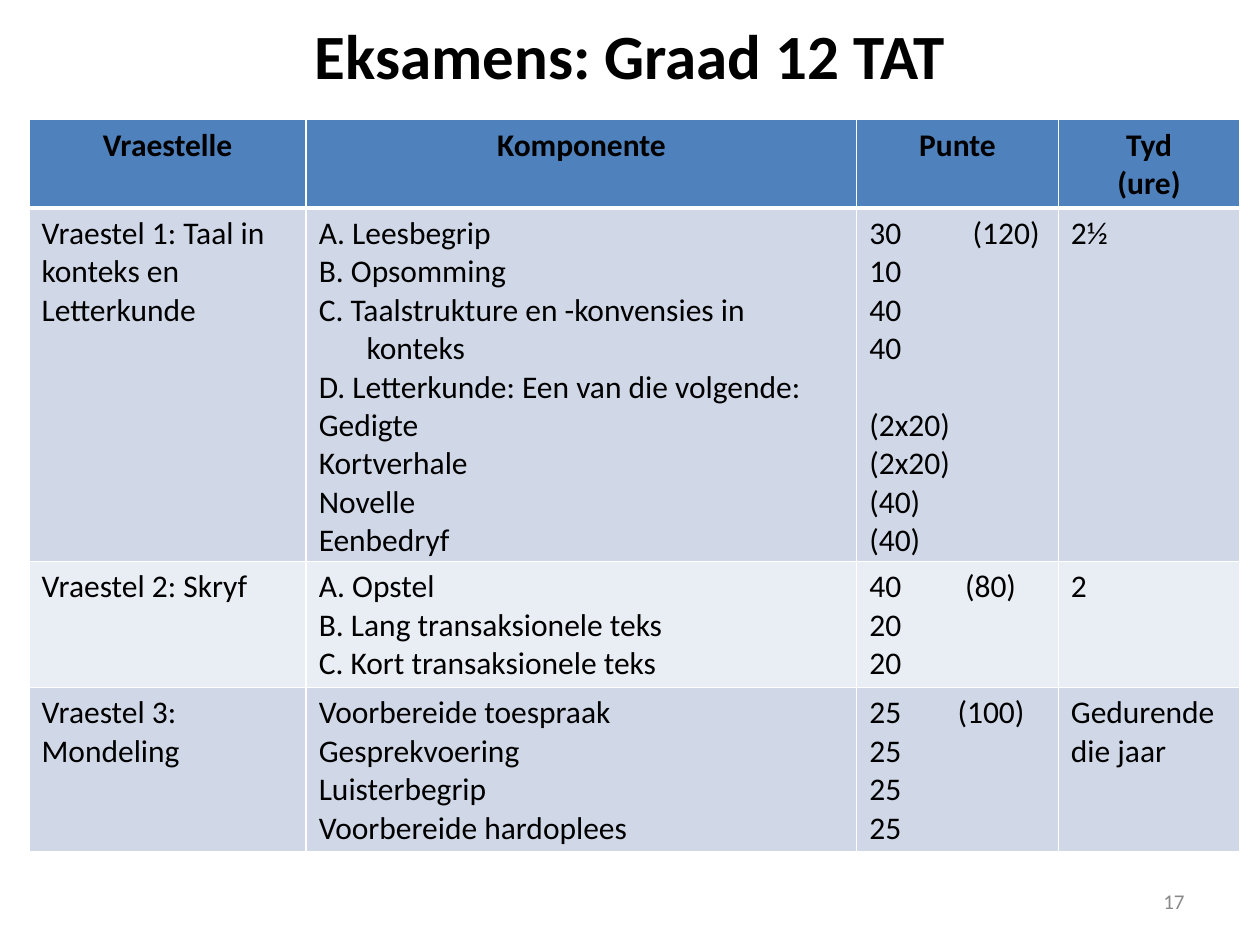
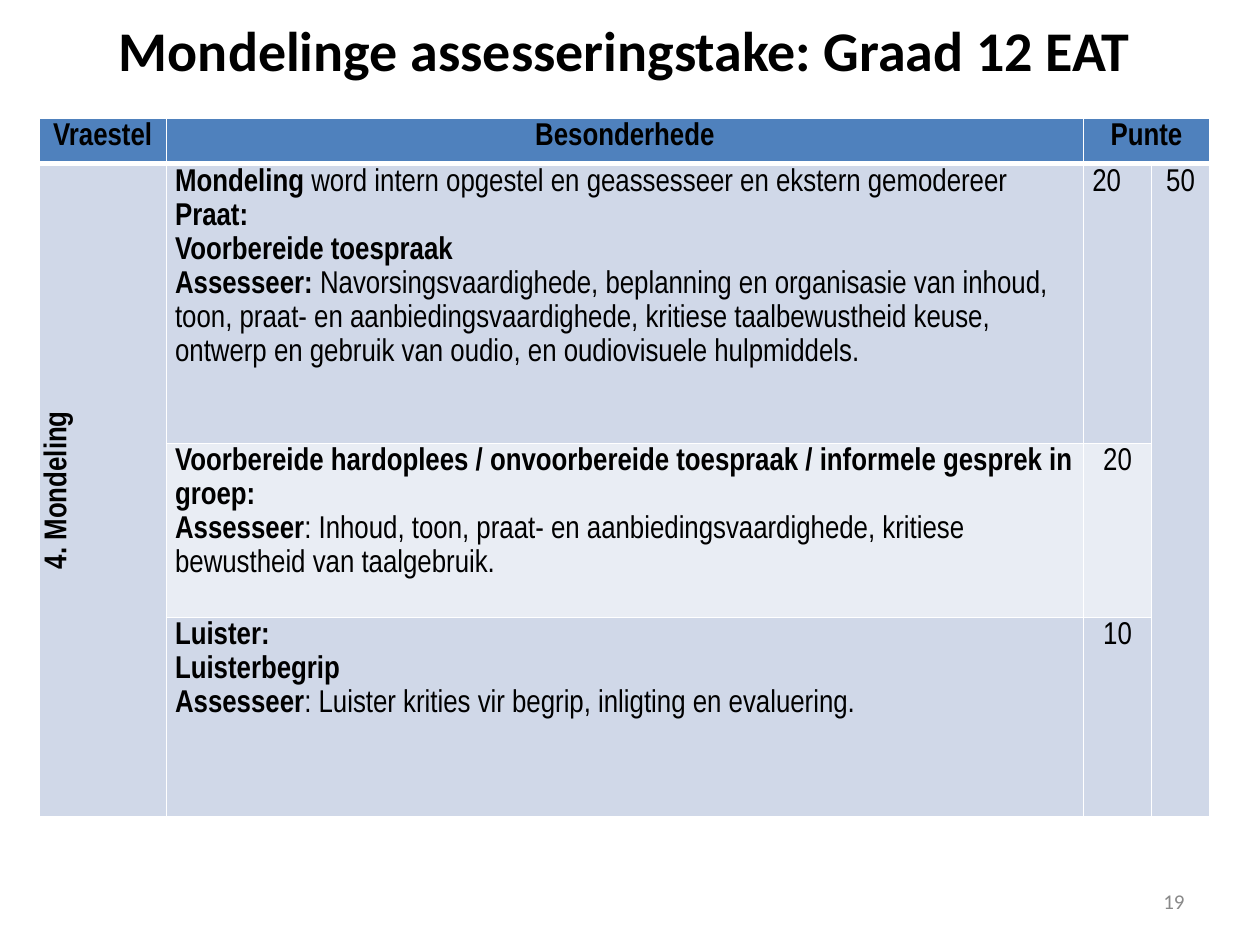
from lxml import etree
from pptx import Presentation
from pptx.dml.color import RGBColor
from pptx.enum.text import MSO_ANCHOR, PP_ALIGN
from pptx.oxml.ns import qn
from pptx.util import Inches, Pt

CENTER, LEFT, RIGHT = PP_ALIGN.CENTER, PP_ALIGN.LEFT, PP_ALIGN.RIGHT
MIDDLE = MSO_ANCHOR.MIDDLE
TITLE_ONLY = 5
BLACK, WHITE, GREY, HEADER = "000000", "FFFFFF", "898989", "4F81BD"
BANDS = ["E9EDF4", "D0D8E8"]

EXAMS = {
    "title": "Eksamens: Graad 12 TAT",
    "title_box": (0.75, 0, 8.5, 0.86),
    "title_size": 36,
    "number": "17",
    "origin": (0.23, 0.95),
    "columns": [2.2, 4.37, 1.6, 1.44],
    "heights": [0.67, 2.38, 1, 1.24],
    "font": "Calibri",
    "margins": (0.1, 0.05),
    "spacing": 1,
    "rows": [
        [["Vraestelle"], ["Komponente"], ["Punte"], ["Tyd", "(ure)"]],
        [
            ["Vraestel 1: Taal in konteks en Letterkunde"],
            ["A. Leesbegrip", "B. Opsomming",
             "C. Taalstrukture en -konvensies in konteks",
             "D. Letterkunde: Een van die volgende:",
             "Gedigte", "Kortverhale", "Novelle", "Eenbedryf"],
            ["30\t(120)", "10", "40", "40", "(2x20)", "(2x20)", "(40)", "(40)"],
            ["2½"],
        ],
        [
            ["Vraestel 2: Skryf"],
            ["A. Opstel", "B. Lang transaksionele teks", "C. Kort transaksionele teks"],
            ["40\t(80)", "20", "20"],
            ["2"],
        ],
        [
            ["Vraestel 3: Mondeling"],
            ["Voorbereide toespraak", "Gesprekvoering", "Luisterbegrip",
             "Voorbereide hardoplees"],
            ["25\t(100)", "25", "25", "25"],
            ["Gedurende die jaar"],
        ],
    ],
    "centred": [(0, column) for column in range(4)],
    "merges": [],
}

ORALS = {
    "title": "Mondelinge assesseringstake: Graad 12 EAT",
    "title_box": (0.31, 0, 9.3, 0.78),
    "title_size": 32,
    "number": "19",
    "origin": (0.31, 0.94),
    "columns": [1.01, 7.28, 0.54, 0.46],
    "heights": [0.36, 2.22, 1.3, 1.58],
    "font": "Arial Narrow",
    "margins": (0.07, 0),
    "spacing": 1.15,
    "rows": [
        [["Vraestel"], ["Besonderhede"], ["Punte"], []],
        [
            [("4. Mondeling", "")],
            [
                ("Mondeling ", "word intern opgestel en geassesseer en ekstern gemodereer"),
                ("Praat:", ""),
                ("Voorbereide toespraak", ""),
                ("Assesseer: ", "Navorsingsvaardighede, beplanning en organisasie van inhoud,"),
                "toon, praat- en aanbiedingsvaardighede, kritiese taalbewustheid keuse,",
                "ontwerp en gebruik van oudio, en oudiovisuele hulpmiddels.",
            ],
            ["20"],
            ["50"],
        ],
        [
            [],
            [
                ("Voorbereide hardoplees / onvoorbereide toespraak / "
                 "informele gesprek in groep:", ""),
                ("Assesseer", ": Inhoud, toon, praat- en aanbiedingsvaardighede, kritiese"),
                "bewustheid van taalgebruik.",
            ],
            ["20"],
            [],
        ],
        [
            [],
            [
                ("Luister:", ""),
                ("Luisterbegrip", ""),
                ("Assesseer", ": Luister krities vir begrip, inligting en evaluering."),
            ],
            ["10"],
            [],
        ],
    ],
    "centred": [(0, 0), (0, 1), (0, 2), (1, 0), (1, 3), (2, 2), (3, 2)],
    "merges": [((0, 2), (0, 3)), ((1, 0), (3, 0)), ((1, 3), (3, 3))],
}

TOTAL_TABS = {1: 0.82, 2: 0.76, 3: 0.7}


def color(value):
    return RGBColor.from_string(value)


def style(font, name, size, value, bold=False):
    font.name = name
    font.size = Pt(size)
    font.bold = bold
    font.color.rgb = color(value)


def add_title(slide, content):
    title = slide.shapes.title
    title.left, title.top, title.width, title.height = map(Inches, content["title_box"])
    title.text_frame.text = content["title"]
    title.text_frame.vertical_anchor = MIDDLE
    para = title.text_frame.paragraphs[0]
    para.alignment = CENTER
    style(para.font, "Calibri", content["title_size"], BLACK, True)


def add_number(slide, number):
    box = slide.shapes.add_textbox(*map(Inches, (7.17, 6.95, 2.33, 0.4)))
    frame = box.text_frame
    frame.word_wrap = True
    frame.vertical_anchor = MIDDLE
    para = frame.paragraphs[0]
    para.text = number
    para.alignment = RIGHT
    style(para.font, "Calibri", 12, GREY)


def add_borders(cell, row):
    properties = cell._tc.get_or_add_tcPr()
    thick = {0: "lnB", 1: "lnT"}.get(row)
    for position, side in enumerate(("lnL", "lnR", "lnT", "lnB")):
        line = etree.Element(qn("a:" + side), w=str(Pt(3 if side == thick else 1)))
        fill = etree.SubElement(line, qn("a:solidFill"))
        etree.SubElement(fill, qn("a:srgbClr"), val=WHITE)
        properties.insert(position, line)


def add_tab(para, position):
    tabs = etree.SubElement(para._p.get_or_add_pPr(), qn("a:tabLst"))
    etree.SubElement(tabs, qn("a:tab"), pos=str(Inches(position)), algn="l")


def set_hanging(para, indent):
    properties = para._p.get_or_add_pPr()
    properties.set("marL", str(Inches(indent)))
    properties.set("indent", str(-Inches(indent)))


def fill_cell(cell, lines, row, alignment, content):
    cell.margin_left = cell.margin_right = Inches(content["margins"][0])
    cell.margin_top = cell.margin_bottom = Inches(content["margins"][1])
    cell.fill.solid()
    cell.fill.fore_color.rgb = color(BANDS[row % 2] if row else HEADER)
    add_borders(cell, row)
    frame = cell.text_frame
    for index, line in enumerate(lines):
        para = frame.add_paragraph() if index else frame.paragraphs[0]
        bold_part, plain_part = line if isinstance(line, tuple) else ("", line)
        if "\t" in plain_part:
            add_tab(para, TOTAL_TABS[row])
        para.alignment = alignment
        para.line_spacing = content["spacing"]
        all_bold = row == 0 or not plain_part
        style(para.font, content["font"], 18, BLACK, all_bold)
        for text, bold in ((bold_part, True), (plain_part, all_bold)):
            if text:
                span = para.add_run()
                span.text = text
                span.font.bold = bold


def add_table(slide, content):
    columns, heights = content["columns"], content["heights"]
    frame = slide.shapes.add_table(
        len(heights), len(columns), *map(Inches, content["origin"]),
        Inches(sum(columns)), Inches(sum(heights)))
    table = frame.table
    for column, width in zip(table.columns, columns):
        column.width = Inches(width)
    for row, height in zip(table.rows, heights):
        row.height = Inches(height)
    for row, cells in enumerate(content["rows"]):
        for column, lines in enumerate(cells):
            alignment = CENTER if (row, column) in content["centred"] else LEFT
            fill_cell(table.cell(row, column), lines, row, alignment, content)
    for first, last in content["merges"]:
        table.cell(*first).merge(table.cell(*last))
    return table


def add_slide(deck, content):
    slide = deck.slides.add_slide(deck.slide_layouts[TITLE_ONLY])
    add_title(slide, content)
    add_number(slide, content["number"])
    return add_table(slide, content)


def main():
    deck = Presentation()
    deck.slide_width, deck.slide_height = Inches(10), Inches(7.5)

    exams = add_slide(deck, EXAMS)
    for row, indent in ((1, 0.38), (2, 0.58)):
        for para in exams.cell(row, 1).text_frame.paragraphs:
            set_hanging(para, indent)
    exams.cell(1, 2).text_frame.paragraphs[4].space_before = Pt(22)

    orals = add_slide(deck, ORALS)
    paper = orals.cell(1, 0)
    paper.vertical_anchor = MIDDLE
    paper._tc.get_or_add_tcPr().set("vert", "vert270")
    paper.text_frame.paragraphs[0].space_after = Pt(10)

    deck.save("out.pptx")


if __name__ == "__main__":
    main()
